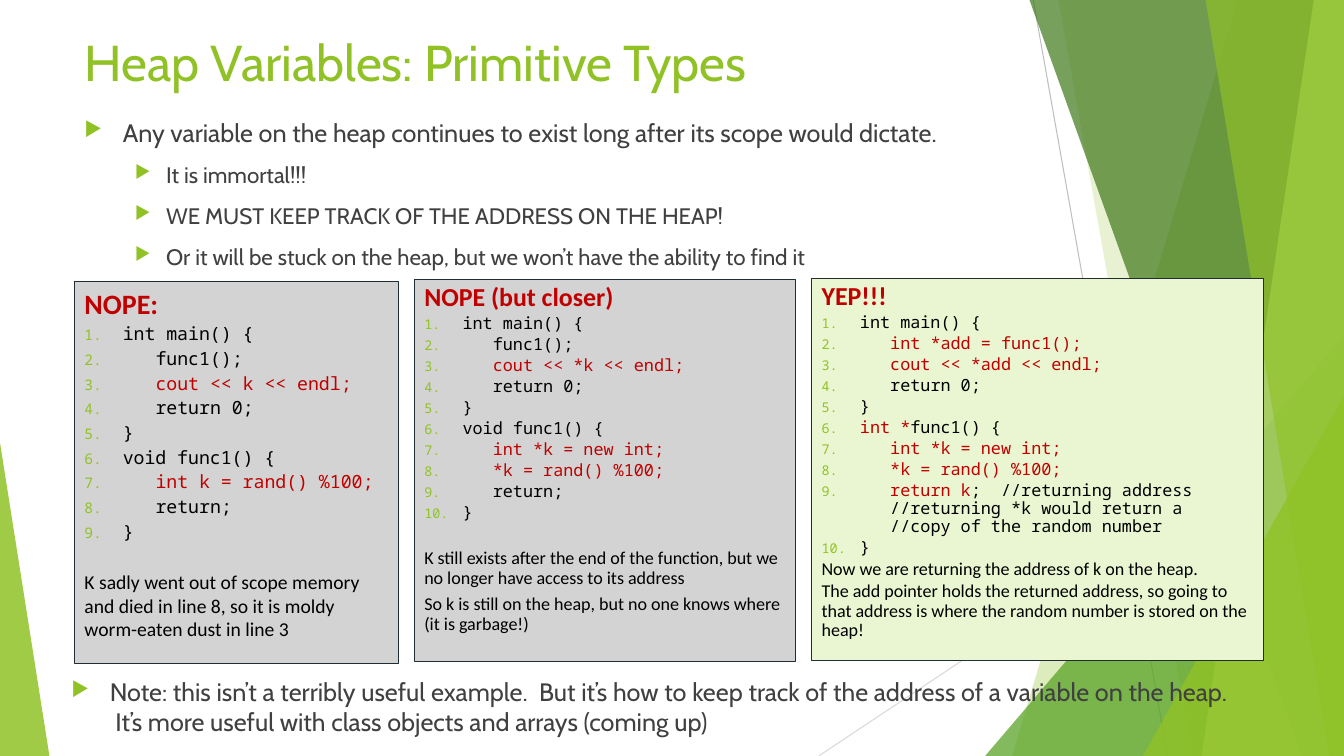
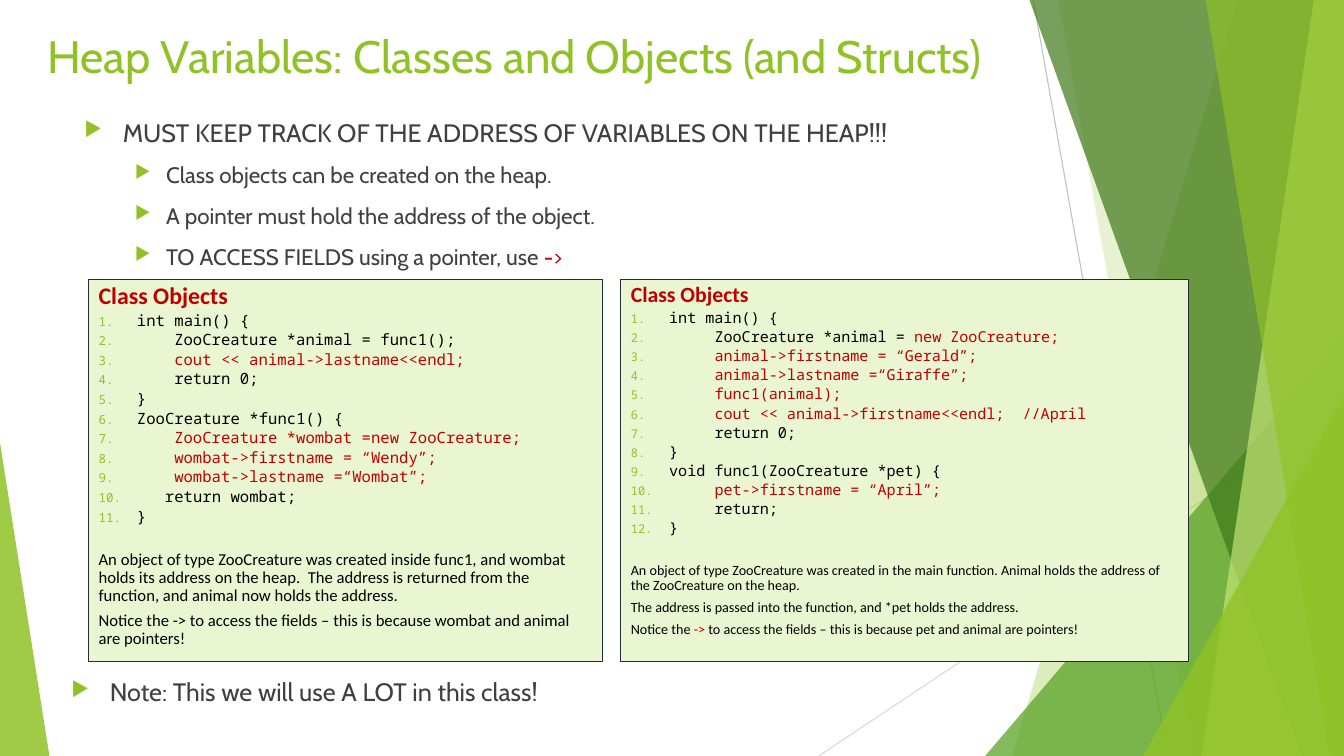
from dataclasses import dataclass

from lxml.etree import SubElement
from pptx import Presentation
from pptx.dml.color import RGBColor
from pptx.enum.shapes import MSO_CONNECTOR as Connector, MSO_SHAPE as Shape
from pptx.enum.text import MSO_ANCHOR as Anchor, PP_ALIGN as Align
from pptx.oxml.ns import qn
from pptx.util import Emu, Inches, Pt


@dataclass(frozen=True)
class Theme:
    green: str = "90C226"
    leaf: str = "54A021"
    forest: str = "3F7819"
    lime: str = "C0E474"
    gray_panel: str = "D3D3D3"
    green_panel: str = "EAF6D1"
    panel_edge: str = "212D32"
    body: str = "404040"
    code: str = "000000"
    red: str = "C00000"
    sans: str = "Cabin"
    prose: str = "Calibri"
    mono: str = "Noto Sans Mono"
    point: float = 18
    subpoint: float = 16
    mono_advance: float = 0.6  # character width as a share of the type size
    hang: float = 0.38


T = Theme()
W, H = Inches(13.33), Inches(7.5)


# Lengths are percentages of the slide's width and height
def across(share: float) -> Emu:
    return Emu(round(W * share / 100))


def down(share: float) -> Emu:
    return Emu(round(H * share / 100))


@dataclass(frozen=True)
class Box:
    x: float
    y: float
    w: float
    h: float

    @property
    def emu(self) -> tuple:
        return across(self.x), down(self.y), across(self.w), down(self.h)


@dataclass(frozen=True)
class Ray:
    x1: float
    y1: float
    x2: float
    y2: float
    color: str


@dataclass(frozen=True)
class Band:
    """Full-height facet that runs to the right edge."""
    top: float
    bottom: float
    color: str
    opacity: int


@dataclass(frozen=True)
class Wedge:
    """Triangle standing on the bottom edge; apex 0 is left, 1 is right."""
    x: float
    y: float
    w: float
    apex: int
    color: str
    opacity: int


@dataclass(frozen=True)
class Style:
    font: str
    size: float
    color: str
    bold: bool = False


@dataclass(frozen=True)
class Panel:
    box: Box
    fill: str
    heading: str
    code: tuple
    notes: tuple
    heading_size: float
    code_size: float
    note_size: float
    gap: float  # points above the first note
    note_space: float = 5
    leading: float = 0.9


@dataclass(frozen=True)
class Page:
    title: str
    title_box: Box
    title_size: float
    points: tuple
    panels: tuple
    note: str


BODY_BOX = Box(5.55, 14.8, 70.5, 26)
NOTE_BOX = Box(4.58, 88.8, 87.7, 10.13)

RAYS = (Ray(76.88, 0, 86.88, 100, "BFBFBF"), Ray(100, 53.73, 60.92, 100, "D9D9D9"))
FACETS = (
    Band(92.1, 75.3, T.green, 30),
    Band(78.75, 88.75, T.green, 20),
    Wedge(73.3, 44.4, 26.7, 1, T.leaf, 72),
    Band(76.6, 96.85, T.forest, 70),
    Band(97.75, 89.4, T.lime, 70),
    Band(89.7, 98.9, T.green, 65),
    Wedge(85.05, 52.4, 14.95, 1, T.green, 80),
    Wedge(0, 58.53, 3.68, 0, T.green, 85),
)

# Text between bars is red; leading spaces in code become indents
PAGES = (
    Page(
        "Heap Variables: Primitive Types", Box(5.55, 3.47, 70.5, 10.13), 36,
        ("Any variable on the heap continues to exist long after its scope would dictate.",
         "It is immortal!!!",
         "WE MUST KEEP TRACK OF THE ADDRESS ON THE HEAP!",
         "Or it will be stuck on the heap, but we won’t have the ability to find it"),
        (Panel(Box(5.55, 37.2, 24.07, 50.53), T.gray_panel, "NOPE:",
               ("int main() {", "   func1();", "   |cout << k << endl;|", "   return 0;", "}",
                "void func1() {", "   |int k = rand() %100;|", "   return;", "}"),
               ("K sadly went out of scope memory and died in line 8, "
                "so it is moldy worm-eaten dust in line 3",),
               20, 13, 14, 20, leading=1),
         Panel(Box(30.83, 36.93, 28.35, 50.53), T.gray_panel, "NOPE (but closer)",
               ("int main() {", "   func1();", "   |cout << *k << endl;|", "   return 0;", "}",
                "void func1() {", "   |int *k = new int;|", "   |*k = rand() %100;|",
                "   return;", "}"),
               ("K still exists after the end of the function, "
                "but we no longer have access to its address",
                "So k is still on the heap, but no one knows where (it is garbage!)"),
               18.5, 12, 12.9, 19.5),
         Panel(Box(60.4, 36.8, 33.6, 50.53), T.green_panel, "YEP!!!",
               ("int main() {", "   |int *add = func1();|", "   |cout << *add << endl;|",
                "   return 0;", "}", "|int *|func1() {", "   |int *k = new int;|",
                "   |*k = rand() %100;|",
                "   |return k|;  //returning address\n//returning *k would return a\n"
                "//copy of the random number", "}"),
               ("Now we are returning the address of k on the heap.",
                "The add pointer holds the returned address, so going to that address "
                "is where the random number is stored on the heap!"),
               18.5, 12, 12.9, 2, note_space=2)),
        "Note: this isn’t a terribly useful example.  But it’s how to keep track of the "
        "address of a variable on the heap.  It’s more useful with class objects and "
        "arrays (coming up)"),
    Page(
        "Heap Variables: Classes and Objects (and Structs)",
        Box(2.78, 3.07, 78.15, 10.13), 32.4,
        ("MUST KEEP TRACK OF THE ADDRESS OF VARIABLES ON THE HEAP!!!",
         "Class objects can be created on the heap.",
         "A pointer must hold the address of the object.",
         "TO ACCESS FIELDS using a pointer, use |->|"),
        (Panel(Box(6.6, 36.93, 38.25, 50.53), T.green_panel, "Class Objects",
               ("int main() {", "    ZooCreature *animal = func1();",
                "    |cout << animal->lastname<<endl;|", "    return 0;", "}",
                "ZooCreature *func1() {", "    |ZooCreature *wombat =new ZooCreature;|",
                "    |wombat->firstname = “Wendy”;|", "    |wombat->lastname =“Wombat”;|",
                "   return wombat;", "}"),
               ("An object of type ZooCreature was created inside func1, and wombat holds "
                "its address on the heap.  The address is returned from the function, and "
                "animal now holds the address.",
                "Notice the -> to access the fields – this is because wombat and animal "
                "are pointers!"),
               17, 11.1, 11.9, 18.5),
         Panel(Box(46.2, 36.93, 42.25, 50.53), T.green_panel, "Class Objects",
               ("int main() {", "     ZooCreature *animal = |new ZooCreature;|",
                "     |animal->firstname = “Gerald”;|", "     |animal->lastname =“Giraffe”;|",
                "     |func1(animal);|",
                "     |cout << animal->firstname<<endl;  //April|", "     return 0;", "}",
                "void func1(ZooCreature *pet) {", "     |pet->firstname = “April”;|",
                "     return;", "}"),
               ("An object of type ZooCreature was created in the main function. Animal "
                "holds the address of the ZooCreature on the heap.",
                "The address is passed into the function, and *pet holds the address.",
                "Notice the| -> |to access the fields – this is because pet and animal "
                "are pointers!"),
               15.5, 10.8, 10.1, 18.5)),
        "Note: This we will use A LOT in this class!"),
)


def rgb(color: str) -> RGBColor:
    return RGBColor.from_string(color)


# Text
def write(tf, text: str, style: Style, before: float = 0, leading: float = 1):
    """Fill the empty first paragraph, or add one, with runs split at bars."""
    p = tf.add_paragraph() if tf.text else tf.paragraphs[0]
    p.alignment, p.space_before, p.line_spacing = Align.LEFT, Pt(before), leading
    for i, segment in enumerate(text.split("|")):
        for j, line in enumerate(segment.split("\n")):
            if j:
                p.add_line_break()
            if line:
                r = p.add_run()
                r.text = line
                r.font.name, r.font.size, r.font.bold = style.font, Pt(style.size), style.bold
                r.font.color.rgb = rgb(T.red if i % 2 else style.color)
    for br in p._p.findall(qn("a:br")):
        SubElement(br, qn("a:rPr"), sz=str(round(style.size * 100)))
    return p


def add_bullet(p, left: float, hang: float, tag: str = "a:buChar", **kind: str) -> None:
    pPr = p._p.get_or_add_pPr()
    pPr.set("marL", str(Inches(left)))
    pPr.set("indent", str(-Inches(hang)))
    color = SubElement(pPr, qn("a:buClr"))
    SubElement(color, qn("a:srgbClr"), val=T.green)
    SubElement(pPr, qn("a:buSzPct"), val="80000")
    SubElement(pPr, qn(tag), **(kind or {"char": "▶"}))


def add_text_box(slide, box: Box):
    tf = slide.shapes.add_textbox(*box.emu).text_frame
    tf.word_wrap = True
    return tf


def add_points(slide, box: Box, points: tuple) -> None:
    tf = add_text_box(slide, box)
    for i, text in enumerate(points):
        size, left, hang = (T.subpoint, 0.81, 0.31) if i else (T.point, T.hang, T.hang)
        add_bullet(write(tf, text, Style(T.sans, size, T.body), 10), left, hang)


# Code panels
def add_panel(slide, panel: Panel) -> None:
    s = slide.shapes.add_shape(Shape.RECTANGLE, *panel.box.emu)
    s.shadow.inherit = False
    s.fill.solid()
    s.fill.fore_color.rgb = rgb(panel.fill)
    s.line.color.rgb, s.line.width = rgb(T.panel_edge), Pt(0.75)
    tf = s.text_frame
    tf.word_wrap, tf.vertical_anchor = True, Anchor.TOP
    write(tf, panel.heading, Style(T.prose, panel.heading_size, T.red, True), 2, panel.leading)
    code_style = Style(T.mono, panel.code_size, T.code)
    for line in panel.code:
        text = line.lstrip(" ")
        spaces = len(line) - len(text)
        left = T.hang + spaces * T.mono_advance * panel.code_size / 72
        p = write(tf, text, code_style, 2, panel.leading)
        add_bullet(p, left, left, "a:buAutoNum", type="arabicPeriod")
    for i, note in enumerate(panel.notes):
        write(tf, note, Style(T.prose, panel.note_size, T.code),
              panel.note_space if i else panel.gap, panel.leading)


# Backdrop
def add_ray(slide, ray: Ray):
    s = slide.shapes.add_connector(Connector.STRAIGHT, across(ray.x1), down(ray.y1),
                                   across(ray.x2), down(ray.y2))
    s.line.color.rgb, s.line.width = rgb(ray.color), Pt(0.75)
    SubElement(s.element.spPr, qn("a:effectLst"))
    return s


def add_facet(slide, facet):
    if isinstance(facet, Band):
        outline = slide.shapes.build_freeform(across(facet.top), 0)
        outline.add_line_segments([(W, 0), (W, H), (across(facet.bottom), H)])
        s = outline.convert_to_shape()
    else:
        box = Box(facet.x, facet.y, facet.w, 100 - facet.y)
        s = slide.shapes.add_shape(Shape.ISOSCELES_TRIANGLE, *box.emu)
        s.adjustments[0] = facet.apex
    s.shadow.inherit = False
    s.fill.solid()
    s.fill.fore_color.rgb = rgb(facet.color)
    color = next(s.element.spPr.iter(qn("a:srgbClr")))
    SubElement(color, qn("a:alpha"), val=str(facet.opacity * 1000))
    s.line.fill.background()
    return s


def move_backdrop_to_layout(slide, layout) -> None:
    """Draw the backdrop once and let every slide inherit it."""
    for ph in list(layout.placeholders):
        layout.shapes.element.remove(ph.element)
    drawn = [add_ray(slide, ray) for ray in RAYS] + [add_facet(slide, f) for f in FACETS]
    for s in drawn:
        layout.shapes.element.append(s.element)


def add_page(slide, page: Page) -> None:
    write(add_text_box(slide, page.title_box), page.title,
          Style(T.sans, page.title_size, T.green))
    add_points(slide, BODY_BOX, page.points)
    for panel in page.panels:
        add_panel(slide, panel)
    add_points(slide, NOTE_BOX, (page.note,))


def main() -> None:
    prs = Presentation()
    prs.slide_width, prs.slide_height = W, H
    blank = prs.slide_layouts[6]
    slides = [prs.slides.add_slide(blank) for _ in PAGES]
    move_backdrop_to_layout(slides[0], blank)
    for slide, page in zip(slides, PAGES):
        add_page(slide, page)
    prs.save("out.pptx")


if __name__ == "__main__":
    main()
